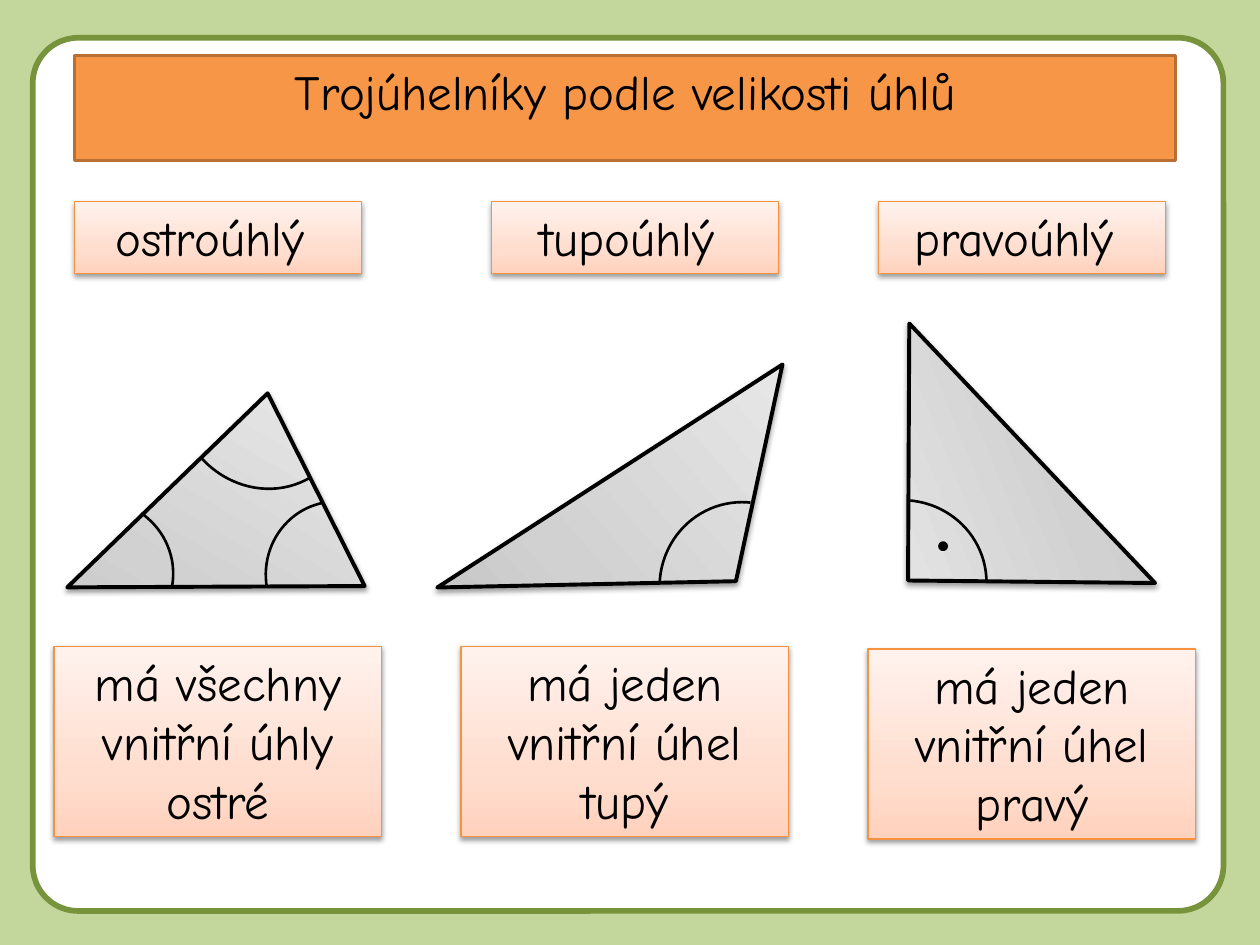
from copy import deepcopy
from dataclasses import dataclass
from math import cos, radians, sin

from lxml.etree import SubElement
from pptx import Presentation
from pptx.dml.color import RGBColor
from pptx.enum.shapes import MSO_SHAPE as Shape
from pptx.enum.text import MSO_ANCHOR as Anchor, MSO_AUTO_SIZE as AutoSize, PP_ALIGN as Align
from pptx.oxml.ns import qn
from pptx.util import Inches, Pt

BLACK = RGBColor(0x00, 0x00, 0x00)
WHITE = RGBColor(0xFF, 0xFF, 0xFF)
BACKDROP = RGBColor(0xC3, 0xD6, 0x9B)
FRAME_GREEN = RGBColor(0x77, 0x93, 0x3C)
ORANGE = RGBColor(0xF7, 0x96, 0x46)
BROWN = RGBColor(0xB7, 0x6F, 0x34)
CARD_EDGE = RGBColor(0xF6, 0x92, 0x40)
PEACH = (RGBColor(0xFF, 0xD2, 0xBD), RGBColor(0xFF, 0xDE, 0xD0), RGBColor(0xFF, 0xF2, 0xED))
GREY = (RGBColor(0xBD, 0xBD, 0xBD), RGBColor(0xD1, 0xD1, 0xD1), RGBColor(0xEE, 0xEE, 0xEE))
FONT = "Comic Neue"

COLUMN_LEFT, COLUMN_PITCH, COLUMN_TOP = 0.43, 3.23, 1.6
LABEL_SIZE = (2.28, 0.57)
RULE_SIZE = (2.6, 1.51)


@dataclass
class Triangle:
    """A kind of triangle, with lengths measured from its column's corner."""
    label: str
    rule: str
    label_x: float
    rule_y: float
    corners: tuple
    centre: tuple
    turn: float
    angles: tuple
    dot: tuple = ()


TRIANGLES = (
    Triangle("ostroúhlý ", "má všechny vnitřní úhly ostré", 0.16, 3.53,
             ((1.69, 1.52), (0.1, 3.06), (2.46, 3.05)), (1.52, 2.65), 30.6,
             (((-0.22, 2.37, 1.17, 1.13), 31, (164.61, 204.72)),
              ((1.66, 2.4, 1.17, 1.13), 264, (160.71, 212.1)),
              ((0.97, 0.8, 1.38, 1.49), 153.7, (160.13, 204.72)))),
    Triangle("tupoúhlý ", "má jeden vnitřní úhel tupý", 0.24, 3.53,
             ((2.55, 1.29), (-0.19, 3.06), (2.18, 3.01)), (1.53, 2.58), 49.4,
             (((1.56, 2.4, 1.34, 1.31), 270, (163.94, 3.43)),)),
    Triangle("pravoúhlý ", "má jeden vnitřní úhel pravý", 0.08, 3.55,
             ((0.32, 3.0), (2.28, 3.02), (0.33, 0.96)), (0.94, 2.14), 247.8,
             (((-0.4, 2.37, 1.34, 1.31), 356.1, (167.75, 1.27)),),
             (0.57, 2.71, 0.05, 0.05)),
)


def outline(shape, colour, width):
    """Draw a solid edge."""
    shape.line.color.rgb = colour
    shape.line.width = Pt(width)


def add_preset(shapes, kind, box, fill, edge, width):
    """Add a flat preset shape in a box given in inches."""
    shape = shapes.add_shape(kind, *map(Inches, box))
    shape.shadow.inherit = False
    if fill is None:
        shape.fill.background()
    else:
        shape.fill.solid()
        shape.fill.fore_color.rgb = fill
    outline(shape, edge, width)
    return shape


def shade(shape, colours):
    """Give a bottom-to-top gradient of three colours and a soft shadow."""
    shape.fill.gradient()
    shape.fill.gradient_angle = 90
    properties = shape.element.spPr
    stops = properties.find(qn("a:gradFill")).find(qn("a:gsLst"))
    stops.append(deepcopy(stops[0]))
    for stop, colour, position in zip(shape.fill.gradient_stops, colours, (0, 0.35, 1)):
        stop.color.rgb = colour
        stop.position = position
    shape.shadow.inherit = False
    shadow = SubElement(properties.find(qn("a:effectLst")), qn("a:outerShdw"),
                        blurRad="40000", dist="20000", dir="5400000", rotWithShape="0")
    tint = SubElement(shadow, qn("a:srgbClr"), val=str(BLACK))
    SubElement(tint, qn("a:alpha"), val="38000")


def write(shape, text):
    """Write centred black text that starts at the top of the shape."""
    frame = shape.text_frame
    frame.text = text
    frame.word_wrap = True
    frame.vertical_anchor = Anchor.TOP
    frame.auto_size = AutoSize.SHAPE_TO_FIT_TEXT
    paragraph = frame.paragraphs[0]
    paragraph.alignment = Align.CENTER
    paragraph.font.name = FONT
    paragraph.font.size = Pt(28)
    paragraph.font.color.rgb = BLACK


def add_heading(slide, frame_box, title_box):
    """Place the rounded frame and the title bar over it."""
    frame = add_preset(slide.shapes, Shape.ROUNDED_RECTANGLE, frame_box, WHITE, FRAME_GREEN, 3.25)
    frame.adjustments[0] = 0.052
    title = slide.shapes.title
    title.left, title.top, title.width, title.height = map(Inches, title_box)
    title.fill.solid()
    title.fill.fore_color.rgb = ORANGE
    outline(title, BROWN, 2)
    write(title, "Trojúhelníky podle velikosti úhlů")
    frame.element.addnext(title.element)


def add_card(shapes, box, text):
    """Place a peach card with text."""
    card = add_preset(shapes, Shape.RECTANGLE, box, None, CARD_EDGE, 0.75)
    shade(card, PEACH)
    write(card, text)


def add_body(shapes, left, top, triangle):
    """Draw the triangle turned about its centre, shading included."""
    centre_x, centre_y = triangle.centre
    cosine, sine = cos(radians(triangle.turn)), sin(radians(triangle.turn))
    corners = []
    for x, y in triangle.corners:
        dx, dy = x - centre_x, y - centre_y
        corners.append((Inches(left + centre_x + dx * cosine + dy * sine),
                        Inches(top + centre_y + dy * cosine - dx * sine)))
    builder = shapes.build_freeform(*corners[0])
    builder.add_line_segments(corners[1:], close=True)
    body = builder.convert_to_shape()
    outline(body, BLACK, 2.25)
    shade(body, GREY)
    body.rotation = triangle.turn


def add_column(slide, left, top, triangle):
    """Place a label, a triangle with its angle marks, and a rule."""
    shapes = slide.shapes
    add_card(shapes, (left + triangle.label_x, top, *LABEL_SIZE), triangle.label)
    add_body(shapes, left, top, triangle)
    marks = shapes.add_group_shape().shapes if triangle.dot else shapes
    for (x, y, width, height), turn, sweep in triangle.angles:
        arc = add_preset(marks, Shape.ARC, (left + x, top + y, width, height), None, BLACK, 1.5)
        arc.adjustments[0], arc.adjustments[1] = sweep
        arc.rotation = turn
    if triangle.dot:
        x, y, width, height = triangle.dot
        add_preset(marks, Shape.OVAL, (left + x, top + y, width, height), BLACK, BLACK, 2)
    add_card(shapes, (left, top + triangle.rule_y, *RULE_SIZE), triangle.rule)


def main():
    """Build the slide and save it."""
    deck = Presentation()
    deck.slide_width, deck.slide_height = Inches(10), Inches(7.5)
    slide = deck.slides.add_slide(deck.slide_layouts[5])
    slide.background.fill.solid()
    slide.background.fill.fore_color.rgb = BACKDROP
    add_heading(slide, (0.26, 0.3, 9.45, 6.93), (0.59, 0.44, 8.74, 0.57))
    for index, triangle in enumerate(TRIANGLES):
        add_column(slide, COLUMN_LEFT + index * COLUMN_PITCH, COLUMN_TOP, triangle)
    deck.save("out.pptx")


if __name__ == "__main__":
    main()
